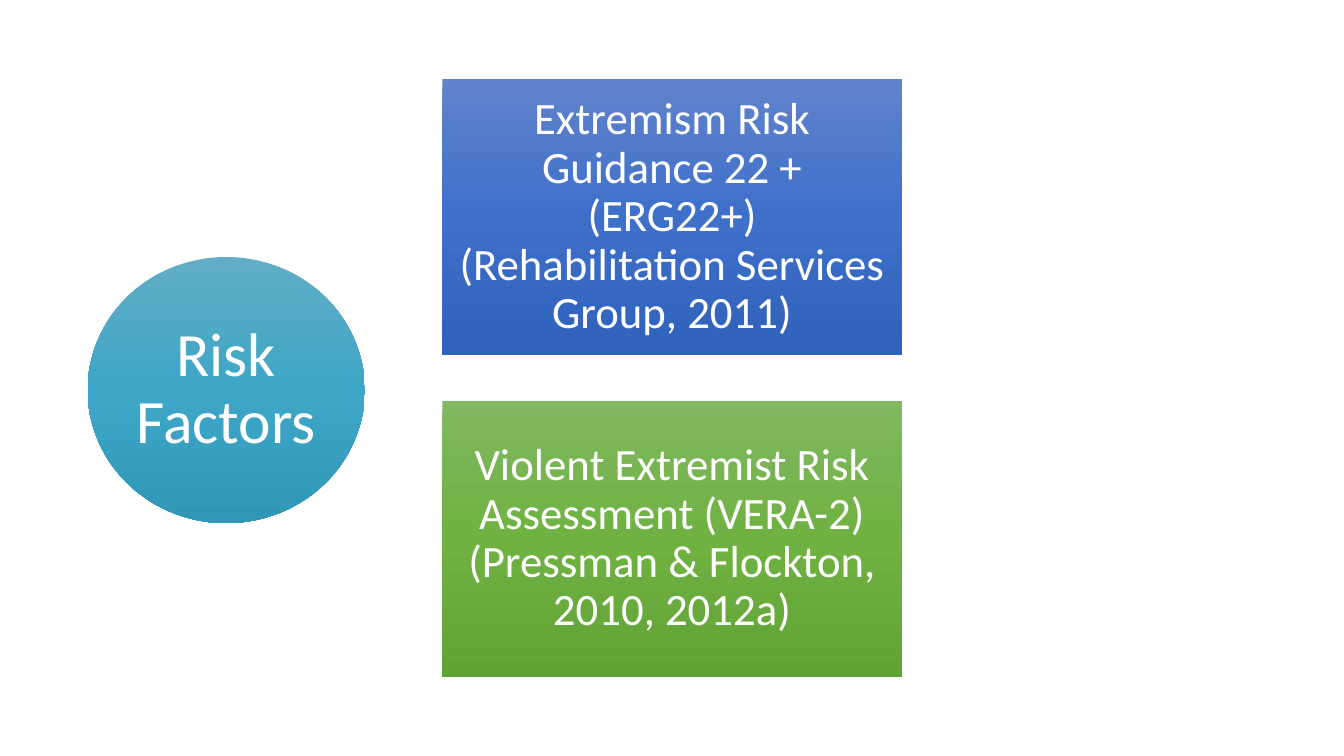
import copy

import pptx
import pptx.dml.color
import pptx.enum.shapes
import pptx.enum.text
import pptx.oxml.ns
import pptx.util

Pt = pptx.util.Pt
SHAPES = pptx.enum.shapes.MSO_SHAPE

TOPIC = "Risk Factors"
TOOLS = [
    ("Extremism Risk Guidance 22 + (ERG22+) (Rehabilitation Services Group, 2011)", "blue"),
    ("Violent Extremist Risk Assessment (VERA-2) (Pressman & Flockton, 2010, 2012a)", "green"),
]
COLORS = {
    "text": "FFFFFF",
    "blue": ("6183CB", "3E70CA", "3062BB"),
    "green": ("81B861", "6FB242", "62A336"),
    "teal": ("61ADC7", "3EA6C6", "3097B7"),
}
FONT = "Calibri"
TOPIC_BOX = (62.6, 183.6, 198, 190.1)
TOOL_LEFT, TOOL_TOP, TOOL_WIDTH, TOOL_HEIGHT = 316, 56.7, 328.2, 196.9
TOOL_GAP = 32.8


def rgb(value):
    return pptx.dml.color.RGBColor.from_string(value)


def fill_gradient(sp, colors):
    """Fill from top to bottom with evenly spaced colour stops."""
    sp.fill.gradient()
    sp.fill.gradient_angle = 270
    stop_list = sp._element.spPr.find(".//" + pptx.oxml.ns.qn("a:gsLst"))
    while len(stop_list) < len(colors):
        stop_list.append(copy.deepcopy(stop_list[-1]))
    for i, (stop, color) in enumerate(zip(sp.fill.gradient_stops, colors)):
        stop.position = i / (len(colors) - 1)
        stop.color.rgb = rgb(color)


def add_label(slide, kind, box, text, size, inset, color):
    sp = slide.shapes.add_shape(kind, *(Pt(v) for v in box))
    sp.shadow.inherit = False
    sp.line.fill.background()
    fill_gradient(sp, COLORS[color])

    tf = sp.text_frame
    tf.text = text
    tf.word_wrap = True
    tf.vertical_anchor = pptx.enum.text.MSO_ANCHOR.MIDDLE
    tf.margin_left = tf.margin_right = tf.margin_top = tf.margin_bottom = Pt(inset)
    p = tf.paragraphs[0]
    p.alignment = pptx.enum.text.PP_ALIGN.CENTER
    p.line_spacing = 0.9
    r = p.runs[0]
    r.font.name = FONT
    r.font.size = Pt(size)
    r.font.color.rgb = rgb(COLORS["text"])


def main():
    prs = pptx.Presentation()
    prs.slide_width, prs.slide_height = Pt(960), Pt(540)
    slide = prs.slides.add_slide(prs.slide_layouts[6])

    for i, (text, color) in enumerate(TOOLS):
        top = TOOL_TOP + i * (TOOL_HEIGHT + TOOL_GAP)
        box = (TOOL_LEFT, top, TOOL_WIDTH, TOOL_HEIGHT)
        add_label(slide, SHAPES.RECTANGLE, box, text, 32, 9.6, color)
    add_label(slide, SHAPES.OVAL, TOPIC_BOX, TOPIC, 44, 1.6, "teal")

    prs.save("out.pptx")


if __name__ == "__main__":
    main()
